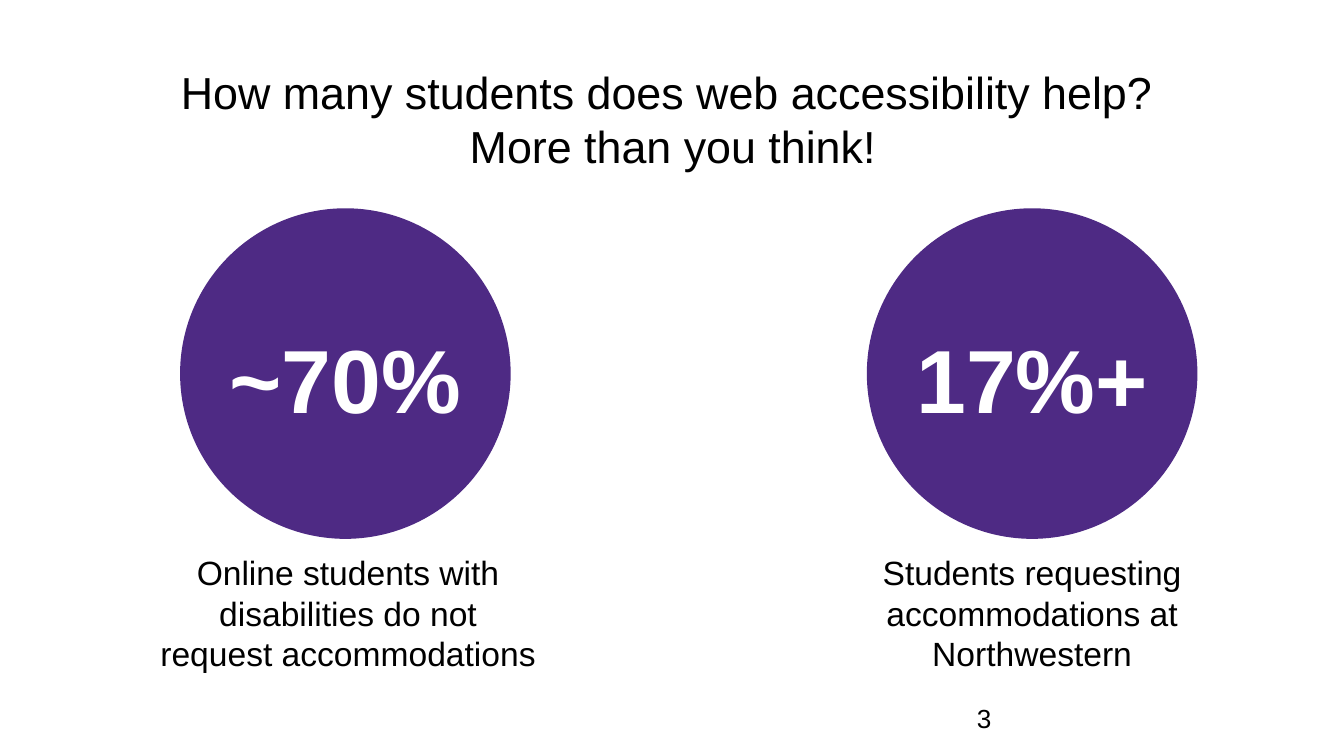
from pptx import Presentation
from pptx.dml.color import RGBColor
from pptx.enum.shapes import MSO_SHAPE
from pptx.enum.text import MSO_ANCHOR, PP_ALIGN
from pptx.util import Inches, Pt

OVAL = MSO_SHAPE.OVAL
TOP, BOTTOM = MSO_ANCHOR.TOP, MSO_ANCHOR.BOTTOM
LEFT, CENTER = PP_ALIGN.LEFT, PP_ALIGN.CENTER
PURPLE, BLACK, WHITE = "4E2A84", "000000", "FFFFFF"


def color(value):
    return RGBColor.from_string(value)


def add_text(left, top, width, height, text, size, font_color=BLACK, bold=False,
             align=CENTER, anchor=TOP, inset=0.1):
    box = slide.shapes.add_textbox(Inches(left), Inches(top), Inches(width), Inches(height))
    frame = box.text_frame
    frame.word_wrap = True
    frame.vertical_anchor = anchor
    frame.margin_left = frame.margin_right = Inches(0.1)
    frame.margin_top = frame.margin_bottom = Inches(inset)
    frame.text = text
    for paragraph in frame.paragraphs:
        paragraph.alignment = align
        for run in paragraph.runs:
            run.font.name = "Arial"
            run.font.size = Pt(size)
            run.font.bold = bold
            run.font.color.rgb = color(font_color)


# Widescreen slide, 16:9
presentation = Presentation()
presentation.slide_width = Inches(10)
presentation.slide_height = Inches(10 * 9 / 16)
slide = presentation.slides.add_slide(presentation.slide_layouts[6])
slide.background.fill.solid()
slide.background.fill.fore_color.rgb = color(WHITE)

# Slide number
add_text(7.17, 5.21, 2.33, 0.3, "3", 14, align=LEFT, anchor=BOTTOM, inset=0.05)

# Title
add_text(1.09, 0.38, 7.83, 0.91,
         "How many students does web accessibility help? \nMore than you think!", 24)

# Statistics: circle left, figure, caption, caption left, caption width
statistics = [
    (6.45, "17%+", "Students requesting accommodations at Northwestern", 6.45, 2.46),
    (1.34, "~70%", "Online students with disabilities do not request accommodations", 1.09, 3),
]
DIAMETER, CIRCLE_TOP, FIGURE_WIDTH = 2.46, 1.55, 2.13
for circle_left, figure, caption, caption_left, caption_width in statistics:
    circle = slide.shapes.add_shape(OVAL, Inches(circle_left), Inches(CIRCLE_TOP),
                                    Inches(DIAMETER), Inches(DIAMETER))
    circle.shadow.inherit = False
    circle.fill.solid()
    circle.fill.fore_color.rgb = color(PURPLE)
    circle.line.fill.background()

    figure_left = circle_left + (DIAMETER - FIGURE_WIDTH) / 2
    add_text(figure_left, 2.31, FIGURE_WIDTH, 1.25, figure, 48, WHITE, bold=True)
    add_text(caption_left, CIRCLE_TOP + DIAMETER, caption_width, 0.91, caption, 18)

presentation.save("out.pptx")
